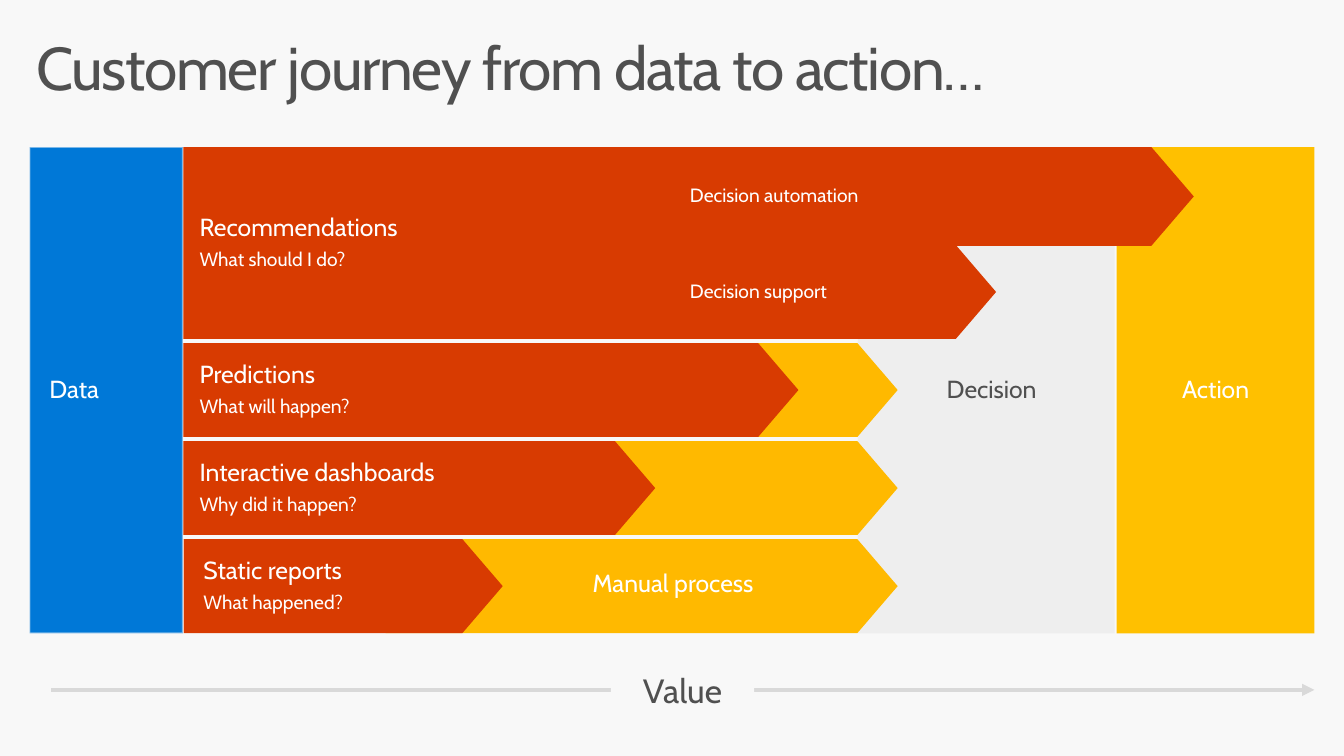
"""Build a slide on the customer journey from data to action."""

from lxml.etree import SubElement
from pptx import Presentation
from pptx.dml.color import RGBColor
from pptx.enum.shapes import MSO_CONNECTOR, MSO_SHAPE
from pptx.enum.text import MSO_ANCHOR, PP_ALIGN
from pptx.oxml.ns import qn
from pptx.util import Cm, Pt

BACKGROUND = RGBColor(0xF8, 0xF8, 0xF8)
WHITE = RGBColor(0xFF, 0xFF, 0xFF)
DARK_GRAY = RGBColor(0x50, 0x50, 0x50)
LIGHT_GRAY = RGBColor(0xEE, 0xEE, 0xEE)
AXIS_GRAY = RGBColor(0xD9, 0xD9, 0xD9)
EDGE_GRAY = RGBColor(0xF9, 0xF9, 0xF9)
BLUE = RGBColor(0x00, 0x78, 0xD7)
RED = RGBColor(0xD8, 0x3B, 0x01)
AMBER = RGBColor(0xFF, 0xB9, 0x00)
GOLD = RGBColor(0xFF, 0xC0, 0x00)

FONT = "Cabin"
TOP = 3.78
FULL_HEIGHT = 12.5
ROW_PITCH = 2.52
ROW_HEIGHT = 2.41
BAR_LEFT = 4.62
MANUAL_RIGHT = 23.07


def write_lines(shape, lines, color=WHITE, alignment=PP_ALIGN.LEFT, spacing=0.9, **frame_format):
    frame = shape.text_frame
    frame_values = {
        "word_wrap": True,
        "vertical_anchor": MSO_ANCHOR.MIDDLE,
        "margin_left": Cm(0.51),
        "margin_right": Cm(0.51),
        "margin_top": Cm(0.41),
        "margin_bottom": Cm(0.41),
    }
    for name, value in (frame_values | frame_format).items():
        setattr(frame, name, value)
    for index, (text, size) in enumerate(lines):
        paragraph = frame.paragraphs[0] if index == 0 else frame.add_paragraph()
        paragraph_values = {"alignment": alignment, "line_spacing": spacing, "space_after": Pt(6)}
        for name, value in paragraph_values.items():
            setattr(paragraph, name, value)
        run = paragraph.add_run()
        run.text = text
        for name, value in {"name": FONT, "size": Pt(size)}.items():
            setattr(run.font, name, value)
        run.font.color.rgb = color


def add_block(kind, left, top, width, height, fill):
    shape = slide.shapes.add_shape(kind, Cm(left), Cm(top), Cm(width), Cm(height))
    shape.shadow.inherit = False
    shape.fill.solid()
    shape.fill.fore_color.rgb = fill
    shape.line.fill.background()
    if kind == MSO_SHAPE.PENTAGON:
        shape.adjustments[0] = 0.429
    return shape


presentation = Presentation()
presentation.slide_width = Cm(34.54)
presentation.slide_height = Cm(19.43)
slide = presentation.slides.add_slide(presentation.slide_layouts[5])
slide.background.fill.solid()
slide.background.fill.fore_color.rgb = BACKGROUND

title = slide.shapes.title
title_place = {"left": Cm(0.53), "top": Cm(0.74), "width": Cm(33.02), "height": Cm(2.54)}
for name, value in title_place.items():
    setattr(title, name, value)
write_lines(
    title, [("Customer journey from data to action…", 44)], DARK_GRAY,
    vertical_anchor=MSO_ANCHOR.TOP, margin_left=Cm(0.41), margin_right=Cm(0.41),
    margin_top=Cm(0.25), margin_bottom=Cm(0.25),
)
title_run = title.text_frame.paragraphs[0].runs[0]
title_run._r.get_or_add_rPr().set("spc", "-100")

action = add_block(MSO_SHAPE.RECTANGLE, 28.7, TOP, 5.08, FULL_HEIGHT, GOLD)
write_lines(action, [("Action", 18)], alignment=PP_ALIGN.CENTER)
decision = add_block(MSO_SHAPE.RECTANGLE, 22.05, TOP, 6.6, FULL_HEIGHT, LIGHT_GRAY)
write_lines(decision, [("Decision", 18)], DARK_GRAY, PP_ALIGN.CENTER, margin_left=Cm(0.78))

stages = [
    (2, BAR_LEFT, 15.9, 17.17, "Predictions", "What will happen?"),
    (3, BAR_LEFT, 12.22, 12.65, "Interactive dashboards", "Why did it happen?"),
    (4, 4.72, 8.2, 9.91, "Static reports", "What happened?"),
]
for row, left, width, manual_left, heading, question in stages:
    top = TOP + row * ROW_PITCH
    manual_width = MANUAL_RIGHT - manual_left
    add_block(MSO_SHAPE.PENTAGON, manual_left, top, manual_width, ROW_HEIGHT, AMBER)
    stage = add_block(MSO_SHAPE.PENTAGON, left, top, width, ROW_HEIGHT, RED)
    write_lines(stage, [(heading, 18), (question, 14)])

manual = slide.shapes.add_textbox(Cm(12.62), Cm(14.33), Cm(9.35), Cm(1.52))
write_lines(
    manual, [("Manual process", 18)], alignment=PP_ALIGN.CENTER, vertical_anchor=MSO_ANCHOR.TOP
)

add_block(MSO_SHAPE.PENTAGON, BAR_LEFT, TOP + ROW_PITCH, 20.98, ROW_HEIGHT, RED)
add_block(MSO_SHAPE.PENTAGON, BAR_LEFT, TOP, 26.06, 2.54, RED)
recommendations = add_block(MSO_SHAPE.RECTANGLE, BAR_LEFT, TOP, 11.43, 4.93, RED)
write_lines(recommendations, [("Recommendations", 18), ("What should I do?", 14)])
for row, text in enumerate(["Decision automation", "Decision support"]):
    label = add_block(MSO_SHAPE.RECTANGLE, 17.22, 4.37 + row * 2.46, 5.66, 1.37, RED)
    write_lines(label, [(text, 14)], vertical_anchor=MSO_ANCHOR.TOP)

data = add_block(MSO_SHAPE.RECTANGLE, 0.76, TOP, 3.94, FULL_HEIGHT, BLUE)
write_lines(data, [("Data", 18)])
data.line.color.rgb = EDGE_GRAY
data.line.width = Pt(1.35)
edge_color = data.line._ln.find(qn("a:solidFill"))[0]
SubElement(edge_color, qn("a:alpha"), val="50000")

axis = slide.shapes.add_connector(
    MSO_CONNECTOR.STRAIGHT, Cm(1.32), Cm(17.73), Cm(33.78), Cm(17.73)
)
axis.line.color.rgb = AXIS_GRAY
axis.line.width = Pt(3)
SubElement(axis.line._ln, qn("a:tailEnd"), type="triangle")
SubElement(axis._element.spPr, qn("a:effectLst"))
value_label = add_block(MSO_SHAPE.RECTANGLE, 15.7, 16.81, 3.68, 1.88, BACKGROUND)
write_lines(
    value_label, [("Value", 24.5)], DARK_GRAY, PP_ALIGN.CENTER, 1.0,
    vertical_anchor=MSO_ANCHOR.TOP,
)

presentation.save("out.pptx")
